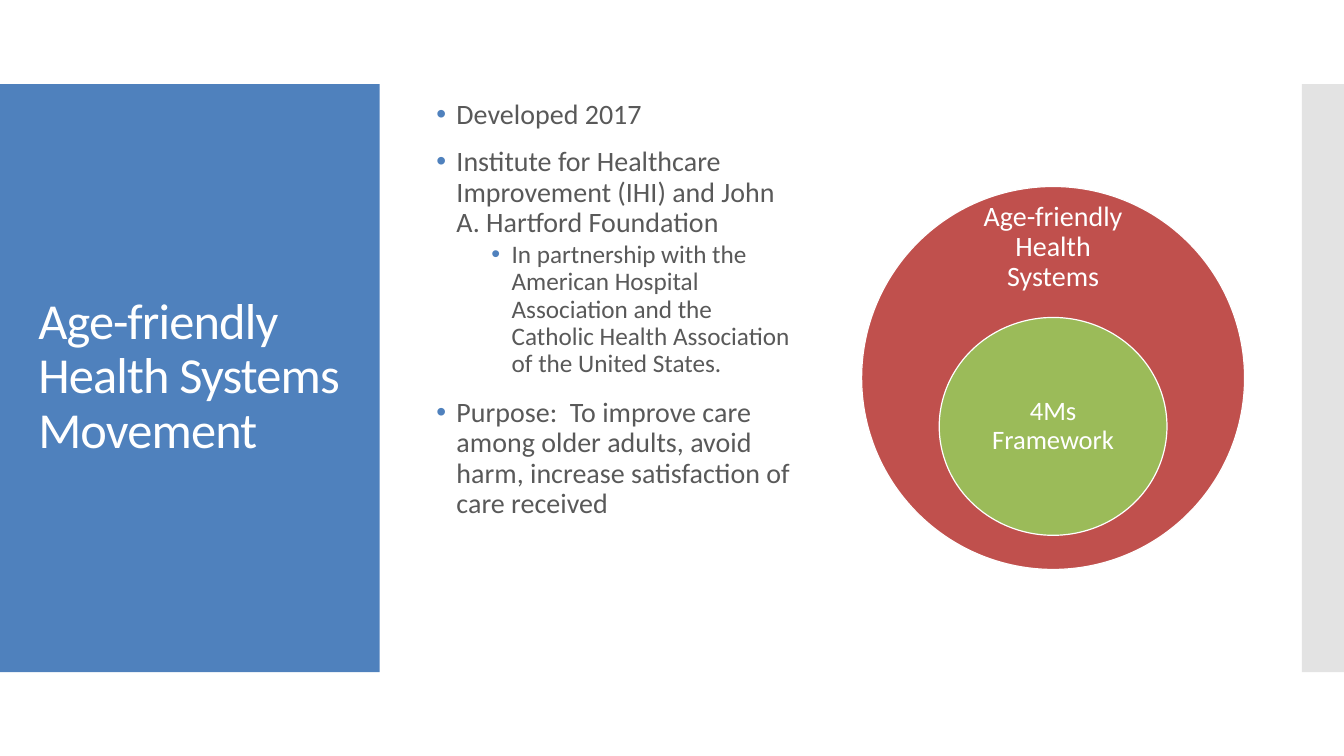
from lxml import etree
from pptx import Presentation
from pptx import util as u
from pptx.dml.color import RGBColor
from pptx.enum import shapes, text
from pptx.oxml import ns

BLUE = RGBColor(0x4F, 0x81, 0xBD)
RED = RGBColor(0xC0, 0x50, 0x4D)
GREEN = RGBColor(0x9B, 0xBB, 0x59)
GREY = RGBColor(0xC8, 0xC8, 0xC8)
DARK = RGBColor(0x59, 0x59, 0x59)
WHITE = RGBColor(0xFF, 0xFF, 0xFF)

PANEL_TOP, PANEL_HEIGHT = 2.12, 14.82
CIRCLES_CENTRE = 26.54

TOPICS = [
    (0, "Developed 2017"),
    (0, "Institute for Healthcare Improvement (IHI) and John A. Hartford Foundation"),
    (1, "In partnership with the American Hospital Association and the "
        "Catholic Health Association of the United States."),
    (0, "Purpose:  To improve care among older adults, avoid harm, "
        "increase satisfaction of care received"),
]


def place(box, left, top, width, height):
    box.left, box.top = u.Cm(left), u.Cm(top)
    box.width, box.height = u.Cm(width), u.Cm(height)


def style(para, size, color):
    para.line_spacing = 0.9
    para.font.size = u.Pt(size)
    para.font.name = "Calibri"
    para.font.color.rgb = color


def add_filled(page, kind, left, top, width, height, fill):
    shape = page.shapes.add_shape(kind, u.Cm(left), u.Cm(top), u.Cm(width), u.Cm(height))
    shape.shadow.inherit = False
    shape.fill.solid()
    shape.fill.fore_color.rgb = fill
    return shape


def add_panel(page, left, width, fill):
    panel = add_filled(page, shapes.MSO_SHAPE.RECTANGLE,
                       left, PANEL_TOP, width, PANEL_HEIGHT, fill)
    panel.line.fill.background()
    # Panels lie behind the title and the list
    page.shapes.title._element.addprevious(panel._element)
    return panel


def make_half_transparent(shape):
    color = shape.fill._xPr.find(".//" + ns.qn("a:srgbClr"))
    etree.SubElement(color, ns.qn("a:alpha"), val="50000")


def add_circle(page, top, width, height, fill):
    circle = add_filled(page, shapes.MSO_SHAPE.OVAL,
                        CIRCLES_CENTRE - width / 2, top, width, height, fill)
    circle.line.color.rgb = WHITE
    circle.line.width = u.Pt(0.85)


def add_label(page, words, top, width, height, size, inset):
    box = page.shapes.add_textbox(u.Cm(CIRCLES_CENTRE - width / 2), u.Cm(top),
                                  u.Cm(width), u.Cm(height))
    frame = box.text_frame
    frame.word_wrap = True
    frame.vertical_anchor = text.MSO_ANCHOR.MIDDLE
    frame.margin_left = frame.margin_right = u.Cm(inset)
    frame.margin_top = frame.margin_bottom = u.Cm(inset)
    frame.text = words
    para = frame.paragraphs[0]
    para.alignment = text.PP_ALIGN.CENTER
    style(para, size, WHITE)


def fill_title(title, words):
    place(title, 0.71, 3.12, 8.18, 12.78)
    frame = title.text_frame
    frame.auto_size = text.MSO_AUTO_SIZE.NONE
    frame.vertical_anchor = text.MSO_ANCHOR.MIDDLE
    frame.text = words
    para = frame.paragraphs[0]
    para.alignment = text.PP_ALIGN.LEFT
    style(para, 36, WHITE)
    para.font._element.set("spc", "-60")


def add_bullet(para, indent):
    props = para._p.get_or_add_pPr()
    props.set("marL", str(u.Cm(indent)))
    props.set("indent", str(u.Cm(-0.51)))
    color = etree.SubElement(props, ns.qn("a:buClr"))
    etree.SubElement(color, ns.qn("a:srgbClr"), val=str(BLUE))
    etree.SubElement(props, ns.qn("a:buChar"), char="•")


def fill_list(body, topics):
    place(body, 10.74, 2.41, 9.65, 14.22)
    frame = body.text_frame
    frame.auto_size = text.MSO_AUTO_SIZE.NONE
    for number, (level, words) in enumerate(topics):
        para = frame.add_paragraph() if number else frame.paragraphs[0]
        para.text = words
        para.level = level
        add_bullet(para, 1.9 if level else 0.51)
        para.space_before = u.Pt(0 if number == 0 else 2.5 if level else 12)
        para.space_after = u.Pt(2.5 if level else 0)
        style(para, 18 if level else 20, DARK)


def main():
    deck = Presentation()
    deck.slide_width, deck.slide_height = u.Cm(33.87), u.Cm(19.05)
    page = deck.slides.add_slide(deck.slide_layouts[1])

    # Side panels
    add_panel(page, 0, 9.57, BLUE)
    make_half_transparent(add_panel(page, 32.81, 1.06, GREY))

    # Title and list
    fill_title(page.shapes.title, "Age-friendly Health Systems Movement")
    fill_list(page.placeholders[1], TOPICS)

    # Nested circles
    add_circle(page, 4.7, 9.65, 9.65, RED)
    add_label(page, "Age-friendly Health Systems", 5.41, 5.08, 1.65, 20, 0.41)
    add_circle(page, 8, 5.74, 5.49, GREEN)
    add_label(page, "4Ms Framework", 9.37, 4.06, 2.74, 19, 0.38)

    deck.save("out.pptx")


if __name__ == "__main__":
    main()
